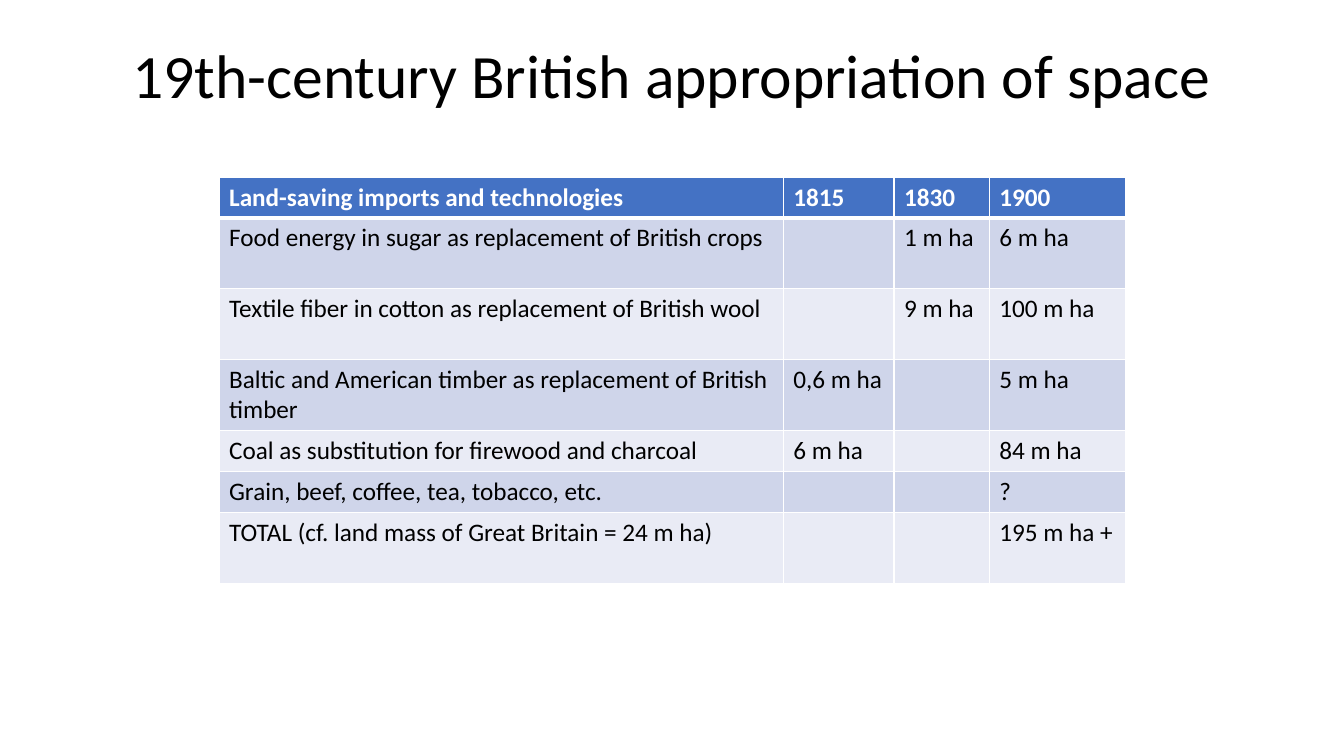
from pptx import Presentation
from pptx.dml.color import RGBColor
from pptx.enum.text import MSO_ANCHOR, PP_ALIGN
from pptx.oxml.ns import qn
from pptx.util import Cm, Pt
from lxml.etree import SubElement

TITLE = "19th-century British appropriation of space"
ROWS = [
    ("Land-saving imports and technologies", "1815", "1830", "1900"),
    ("Food energy in sugar as replacement of British crops", "", "1 m ha", "6 m ha"),
    ("Textile fiber in cotton as replacement of British wool", "", "9 m ha", "100 m ha"),
    ("Baltic and American timber as replacement of British timber", "0,6 m ha", "", "5 m ha"),
    ("Coal as substitution for firewood and charcoal", "6 m ha", "", "84 m ha"),
    ("Grain, beef, coffee, tea, tobacco, etc.", "", "", "?"),
    ("TOTAL (cf. land mass of Great Britain = 24 m ha)", "", "", "195 m ha +"),
]
COLUMN_WIDTHS = [14.22, 2.79, 2.4, 3.43]
SHORT, TALL = 1.03, 1.78
ROW_HEIGHTS = [SHORT, TALL, TALL, TALL, SHORT, SHORT, TALL]
HEADER_FILL, BAND_FILLS = "4472C4", ["E9EBF5", "CFD5EA"]
WHITE, BLACK = "FFFFFF", "000000"


def color(value):
    return RGBColor.from_string(value)


def write_text(frame, text, size=18, fill=BLACK, bold=False, align=PP_ALIGN.LEFT, spacing=1.0):
    paragraph = frame.paragraphs[0]
    paragraph.alignment = align
    paragraph.line_spacing = spacing
    paragraph.font.size = Pt(size)
    if text:
        run = paragraph.add_run()
        run.text = text
        run.font.name = "Calibri"
        run.font.size = Pt(size)
        run.font.bold = bold
        run.font.color.rgb = color(fill)


def add_borders(cell, bottom):
    properties = cell._tc.get_or_add_tcPr()
    for side, width in (("lnL", 1), ("lnR", 1), ("lnT", 1), ("lnB", bottom)):
        line = SubElement(properties, qn(f"a:{side}"), w=str(Pt(width)))
        SubElement(SubElement(line, qn("a:solidFill")), qn("a:srgbClr"), val=WHITE)


def add_title(slide):
    title = slide.shapes.title
    title.left, title.top, title.width, title.height = Cm(2.33), Cm(1.01), Cm(29.21), Cm(3.68)
    title.text_frame.vertical_anchor = MSO_ANCHOR.TOP
    title.text_frame.word_wrap = True
    write_text(title.text_frame, TITLE, size=44, align=PP_ALIGN.CENTER, spacing=0.9)


def add_land_table(slide):
    table = slide.shapes.add_table(
        len(ROWS), len(COLUMN_WIDTHS), Cm(5.52), Cm(4.46),
        Cm(sum(COLUMN_WIDTHS)), Cm(sum(ROW_HEIGHTS)),
    ).table
    for column, width in zip(table.columns, COLUMN_WIDTHS):
        column.width = Cm(width)
    for index, (row, height, texts) in enumerate(zip(table.rows, ROW_HEIGHTS, ROWS)):
        row.height = Cm(height)
        header = index == 0
        for cell, text in zip(row.cells, texts):
            add_borders(cell, bottom=3 if header else 1)
            cell.fill.solid()
            cell.fill.fore_color.rgb = color(HEADER_FILL if header else BAND_FILLS[index % 2])
            write_text(cell.text_frame, text, fill=WHITE if header else BLACK, bold=header)


def main():
    presentation = Presentation()
    presentation.slide_width, presentation.slide_height = Cm(33.87), Cm(19.05)
    slide = presentation.slides.add_slide(presentation.slide_layouts[5])
    add_title(slide)
    add_land_table(slide)
    presentation.save("out.pptx")


if __name__ == "__main__":
    main()
